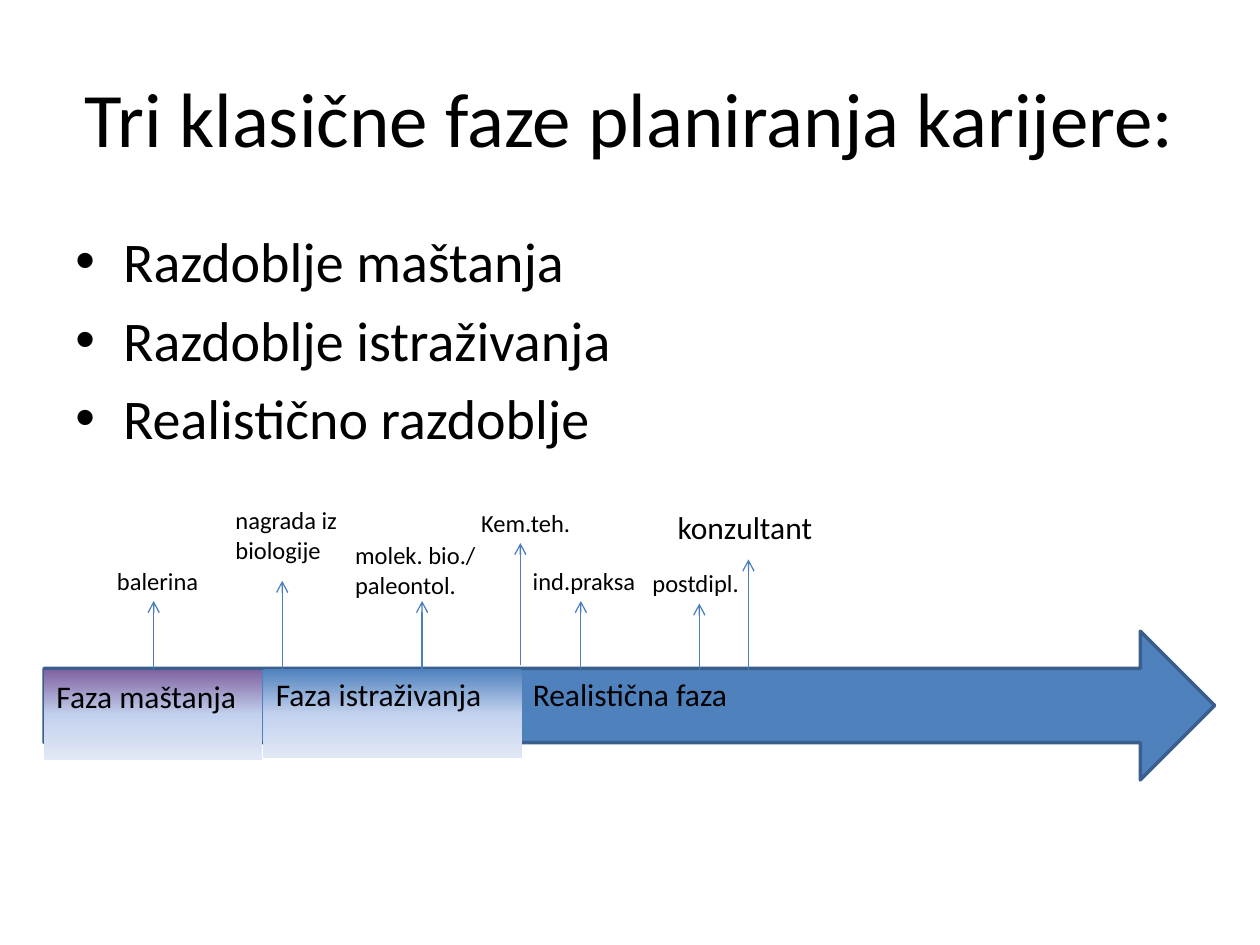
from copy import deepcopy
from dataclasses import dataclass

from lxml import etree
from pptx import Presentation
from pptx.dml.color import RGBColor
from pptx.enum.shapes import MSO_CONNECTOR, MSO_SHAPE
from pptx.enum.text import MSO_ANCHOR, PP_ALIGN
from pptx.oxml.ns import qn
from pptx.util import Emu, Pt

RIGHT_ARROW, RECTANGLE = MSO_SHAPE.RIGHT_ARROW, MSO_SHAPE.RECTANGLE
STRAIGHT = MSO_CONNECTOR.STRAIGHT
TOP, MIDDLE = MSO_ANCHOR.TOP, MSO_ANCHOR.MIDDLE
LEFT, CENTER = PP_ALIGN.LEFT, PP_ALIGN.CENTER
EMU_PER_PX = 9144  # 100 px to the inch
TITLE_ONLY = 5


@dataclass(frozen=True)
class Theme:
    font: str = "Calibri"
    text: str = "000000"
    blue: str = "4F81BD"
    blue_edge: str = "3A5F8C"
    pointer: str = "4B7EBC"
    purple: str = "8064A2"
    fade_middle: str = "C2D1ED"
    fade_end: str = "E1E8F5"
    title_size: int = 44
    bullet_size: int = 32
    phase_size: int = 18
    step_size: int = 14


@dataclass(frozen=True)
class Box:
    left: int
    top: int
    width: int
    height: int

    def emu(self) -> tuple:
        return tuple(px(v) for v in (self.left, self.top, self.width, self.height))


@dataclass(frozen=True)
class Phase:
    name: str
    box: Box
    color: str


@dataclass(frozen=True)
class Step:
    """A career idea above the time line, with its pointer."""
    label: str
    box: Box
    size: int
    pointer_x: int
    pointer_start: int
    pointer_end: int


THEME = Theme()
TITLE = "Tri klasične faze planiranja karijere:"
TITLE_BOX = Box(50, 30, 900, 125)
PERIODS = ("Razdoblje maštanja", "Razdoblje istraživanja", "Realistično razdoblje")
PERIODS_BOX = Box(50, 175, 900, 495)
TIMELINE_BOX = Box(35, 501, 929, 118)
PHASES = (
    Phase("Faza maštanja", Box(35, 532, 173, 71), THEME.purple),
    Phase("Faza istraživanja", Box(209, 531, 205, 71), THEME.blue),
)
FINAL_PHASE, FINAL_BOX = "Realistična faza", Box(413, 531, 409, 71)
SMALL, LARGE = THEME.step_size, THEME.phase_size
STEPS = (
    Step("balerina", Box(83, 444, 110, 34), SMALL, 122, 531, 477),
    Step("nagrada iz biologije", Box(177, 396, 102, 57), SMALL, 224, 531, 461),
    Step("molek. bio./ paleontol.", Box(272, 424, 118, 57), SMALL, 335, 531, 477),
    Step("Kem.teh.", Box(372, 398, 94, 34), SMALL, 413, 528, 431),
    Step("ind.praksa", Box(413, 444, 110, 34), SMALL, 461, 531, 477),
    Step("postdipl.", Box(508, 446, 94, 34), SMALL, 555, 532, 479),
    Step("konzultant", Box(528, 398, 134, 40), LARGE, 594, 532, 444),
)


def px(value: int) -> Emu:
    return Emu(value * EMU_PER_PX)


def rgb(color: str) -> RGBColor:
    return RGBColor.from_string(color)


def write(frame, lines: tuple, size: int, align=LEFT, anchor=TOP) -> None:
    frame.word_wrap = True
    frame.vertical_anchor = anchor
    frame.text = "\n".join(lines)
    for paragraph in frame.paragraphs:
        paragraph.alignment = align
        paragraph.font.name = THEME.font
        paragraph.font.size = Pt(size)
        paragraph.font.color.rgb = rgb(THEME.text)


def add_text(slide, box: Box, lines: tuple, size: int):
    frame = slide.shapes.add_textbox(*box.emu()).text_frame
    write(frame, lines, size)
    return frame


def add_title(slide) -> None:
    title = slide.shapes.title
    title.left, title.top, title.width, title.height = TITLE_BOX.emu()
    write(title.text_frame, (TITLE,), THEME.title_size, CENTER, MIDDLE)


def add_periods(slide) -> None:
    frame = add_text(slide, PERIODS_BOX, PERIODS, THEME.bullet_size)
    for paragraph in frame.paragraphs:
        paragraph.space_before = Pt(THEME.bullet_size * 0.2)
        properties = paragraph._p.get_or_add_pPr()
        properties.set("marL", str(px(38)))
        properties.set("indent", str(-px(38)))
        bullet_font = etree.Element(qn("a:buFont"), typeface="Arial")
        bullet = etree.Element(qn("a:buChar"), char="•")
        properties.find(qn("a:spcBef")).addnext(bullet_font)
        bullet_font.addnext(bullet)


def add_timeline(slide) -> None:
    arrow = slide.shapes.add_shape(RIGHT_ARROW, *TIMELINE_BOX.emu())
    arrow.shadow.inherit = False
    arrow.fill.solid()
    arrow.fill.fore_color.rgb = rgb(THEME.blue)
    arrow.line.color.rgb = rgb(THEME.blue_edge)
    arrow.line.width = Pt(2)


def fade_down(shape, color: str) -> None:
    """Fill from the given colour at the top to pale blue at the bottom."""
    fill = shape.fill
    fill.gradient()
    fill.gradient_angle = 270
    stop_list = shape._element.spPr.find(qn("a:gradFill")).find(qn("a:gsLst"))
    stop_list.append(deepcopy(stop_list[-1]))
    colors = (color, THEME.fade_middle, THEME.fade_end)
    for stop, position, shade in zip(fill.gradient_stops, (0, 0.5, 1), colors):
        stop.position = position
        stop.color.rgb = rgb(shade)


def add_phase(slide, phase: Phase) -> None:
    band = slide.shapes.add_shape(RECTANGLE, *phase.box.emu())
    band.shadow.inherit = False
    band.line.fill.background()
    fade_down(band, phase.color)
    write(band.text_frame, (phase.name,), THEME.phase_size)


def add_step(slide, step: Step) -> None:
    x = px(step.pointer_x)
    pointer = slide.shapes.add_connector(
        STRAIGHT, x, px(step.pointer_start), x, px(step.pointer_end))
    pointer.line.color.rgb = rgb(THEME.pointer)
    pointer.line.width = Pt(0.75)
    etree.SubElement(pointer.line._get_or_add_ln(), qn("a:tailEnd"), type="arrow")
    etree.SubElement(pointer._element.spPr, qn("a:effectLst"))
    add_text(slide, step.box, (step.label,), step.size)


def main() -> None:
    deck = Presentation()
    deck.slide_width, deck.slide_height = px(1000), px(750)
    slide = deck.slides.add_slide(deck.slide_layouts[TITLE_ONLY])
    add_title(slide)
    add_periods(slide)
    add_timeline(slide)
    for phase in PHASES:
        add_phase(slide, phase)
    add_text(slide, FINAL_BOX, (FINAL_PHASE,), THEME.phase_size)
    for step in STEPS:
        add_step(slide, step)
    deck.save("out.pptx")


if __name__ == "__main__":
    main()
